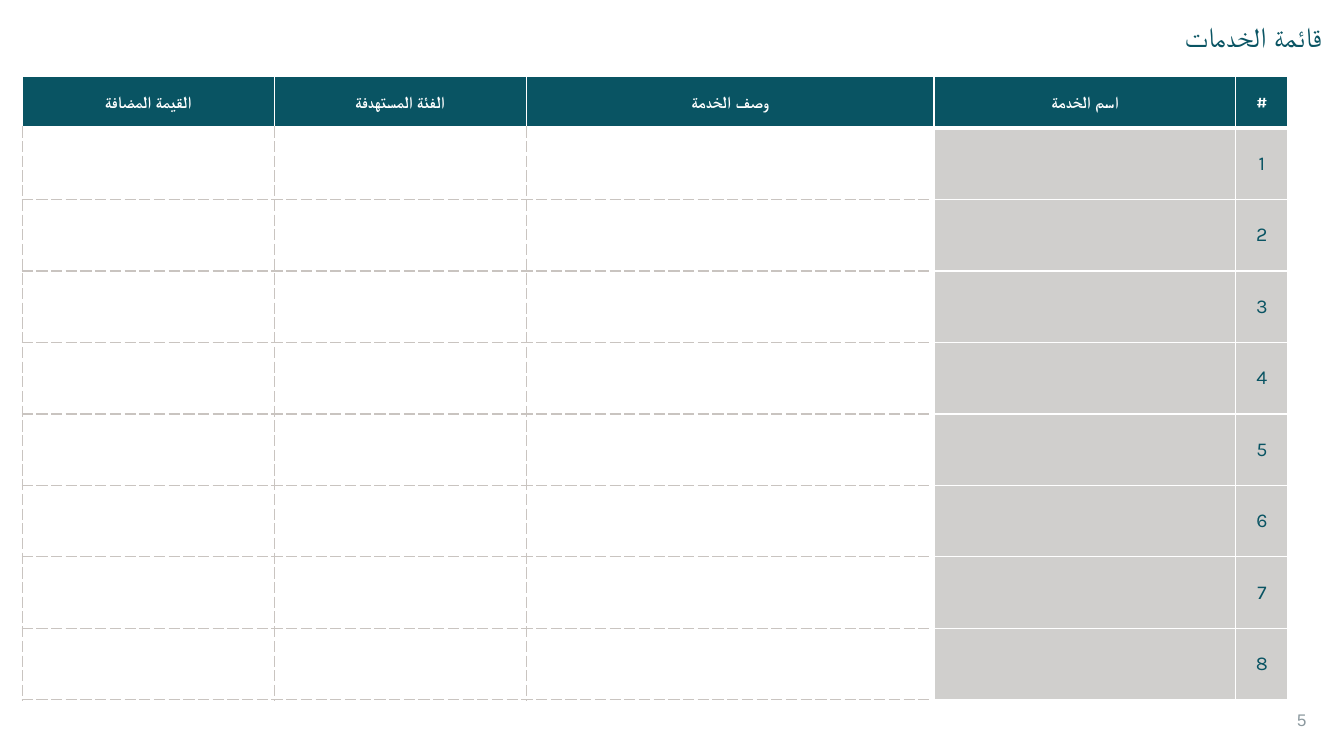
from lxml import etree
from pptx import Presentation
from pptx import util as u
from pptx.dml.color import RGBColor
from pptx.enum import text
from pptx.oxml.ns import qn

COLORS = {
    "teal": "095463",
    "gray": "D0CFCD",
    "dash": "C9C4C0",
    "white": "FFFFFF",
    "number": "8C999F",
}
HEADERS = ["القيمة المضافة", "الفئة المستهدفة", "وصف الخدمة", "اسم الخدمة", "#"]
COLUMN_WIDTHS = [6.35, 6.35, 10.28, 7.6, 1.32]
HEADER_HEIGHT, ROW_HEIGHT = 1.3, 1.8
SERVICE_COUNT = 8
NAME_COLUMN = 3  # the shaded columns start here
NUMBER_COLUMN = 4


class ServiceSlide:
    def __init__(self, presentation):
        self.slide = presentation.slides.add_slide(presentation.slide_layouts[6])

    def color(self, name):
        return RGBColor.from_string(COLORS[name])

    def style_text(self, text_frame, content, font, size, color, align, bold=False):
        text_frame.text = content
        paragraph = text_frame.paragraphs[0]
        paragraph.alignment = align
        paragraph._p.get_or_add_pPr().set("rtl", "1")
        run = paragraph.runs[0]
        run.font.name = font
        run.font.size = u.Pt(size)
        run.font.bold = bold
        run.font.color.rgb = self.color(color)
        # Arabic letters take the complex-script font
        etree.SubElement(run.font._element, qn("a:cs"), typeface=font)

    def text_box(self, left, top, width, height, content, size, color, align):
        box = self.slide.shapes.add_textbox(
            u.Cm(left), u.Cm(top), u.Cm(width), u.Cm(height))
        box.text_frame.word_wrap = True
        self.style_text(box.text_frame, content, "Arial", size, color, align)

    def borders(self, cell, sides):
        properties = cell._tc.get_or_add_tcPr()
        for index, side in enumerate("LRTB"):
            color, width, dash = sides[side]
            line = etree.Element(qn(f"a:ln{side}"), w=str(u.Pt(width)))
            fill = etree.SubElement(line, qn("a:solidFill"))
            etree.SubElement(fill, qn("a:srgbClr"), val=COLORS[color])
            etree.SubElement(line, qn("a:prstDash"), val=dash)
            properties.insert(index, line)

    def cell(self, cell, fill, sides, content="", size=12, color="white", bold=False):
        cell.fill.solid()
        cell.fill.fore_color.rgb = self.color(fill)
        cell.vertical_anchor = text.MSO_ANCHOR.MIDDLE
        if content:
            self.style_text(cell.text_frame, content, "Karla", size, color,
                            text.PP_ALIGN.CENTER, bold)
        self.borders(cell, sides)

    def service_table(self, left, top):
        height = HEADER_HEIGHT + SERVICE_COUNT * ROW_HEIGHT
        table = self.slide.shapes.add_table(
            SERVICE_COUNT + 1, len(HEADERS), u.Cm(left), u.Cm(top),
            u.Cm(sum(COLUMN_WIDTHS)), u.Cm(height)).table
        table.first_row = table.horz_banding = False
        for column, width in zip(table.columns, COLUMN_WIDTHS):
            column.width = u.Cm(width)
        for index, row in enumerate(table.rows):
            row.height = u.Cm(ROW_HEIGHT if index else HEADER_HEIGHT)

        thin, thick = ("white", 1, "solid"), ("white", 3, "solid")
        dashed = ("dash", 1, "dash")

        # Header row
        for column, header in enumerate(HEADERS):
            sides = {**dict.fromkeys("LRT", thin), "B": thick}
            self.cell(table.cell(0, column), "teal", sides, header, bold=True)

        # Service rows
        for row in range(1, SERVICE_COUNT + 1):
            for column in range(len(HEADERS)):
                shaded = column >= NAME_COLUMN
                sides = dict.fromkeys("LRTB", thin if shaded else dashed)
                if row == 1:
                    sides["T"] = thick
                if column == NAME_COLUMN - 1:
                    sides["R"] = thin
                content = str(row) if column == NUMBER_COLUMN else ""
                self.cell(table.cell(row, column), "gray" if shaded else "white",
                          sides, content, 14, "teal")


def main():
    presentation = Presentation()
    presentation.slide_width, presentation.slide_height = u.Cm(33.87), u.Cm(19.05)
    slide = ServiceSlide(presentation)

    # Slide number and title
    slide.text_box(32.44, 17.75, 1.12, 1.02, "5", 12, "number", text.PP_ALIGN.LEFT)
    slide.text_box(1.75, 0.36, 31.8, 1.57, "قائمة الخدمات", 20, "teal",
                   text.PP_ALIGN.RIGHT)

    # Services
    slide.service_table(0.56, 1.93)
    presentation.save("out.pptx")


if __name__ == "__main__":
    main()
